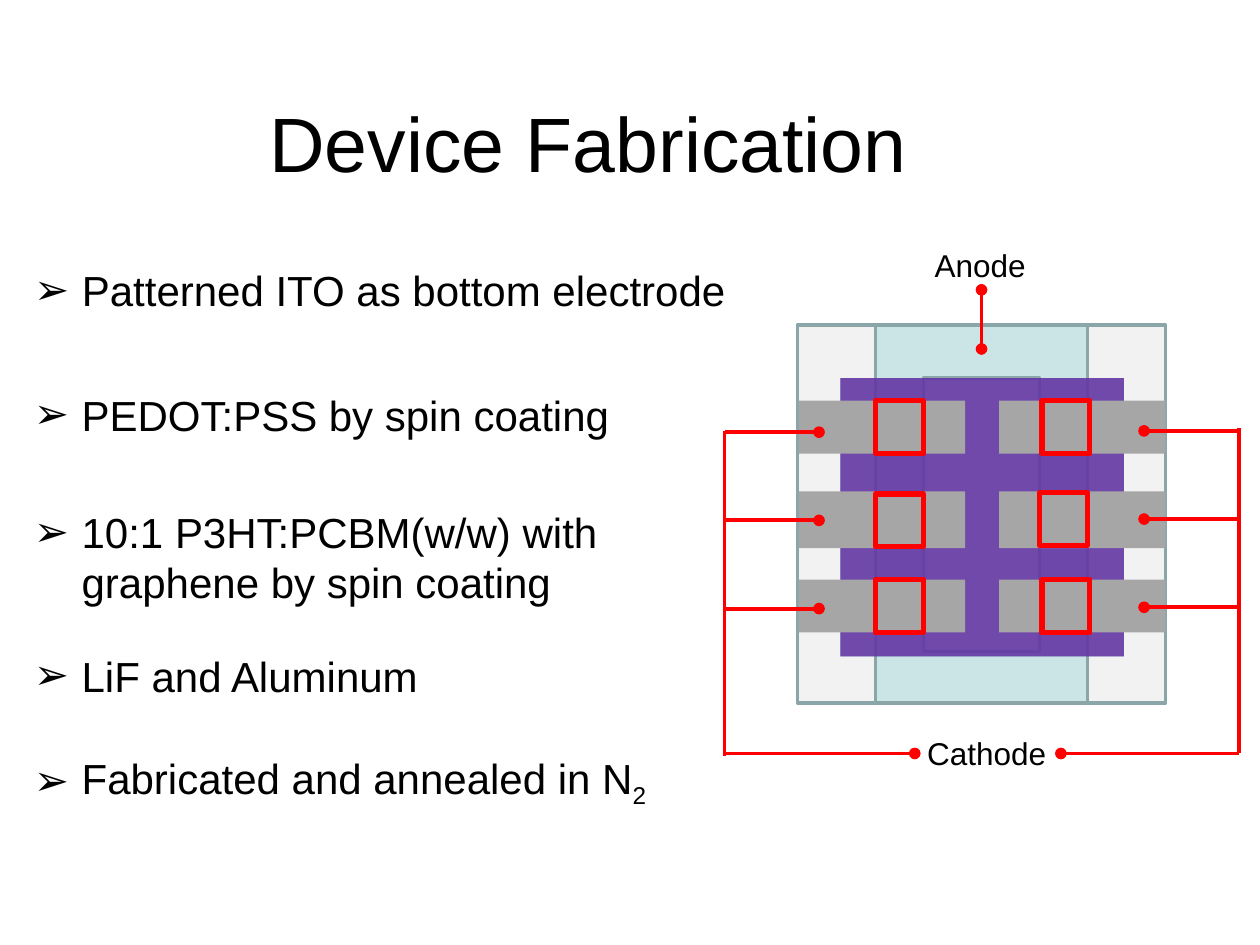
"""Build the Device Fabrication slide with its electrode layout diagram."""
from dataclasses import dataclass

from lxml import etree
from pptx import Presentation
from pptx import util as u
from pptx.dml.color import RGBColor
from pptx.enum import shapes, text
from pptx.oxml.ns import qn

PX = 9144


@dataclass(frozen=True)
class Theme:
    font: str = "Arial"
    ink: str = "000000"
    glass: str = "F2F2F2"
    edge: str = "8AA6A8"
    ito: str = "BBE0E3"
    blend: str = "0070C0"
    film: str = "7030A0"
    metal: str = "A6A6A6"
    mark: str = "FF0000"
    head: int = 44
    body: int = 24
    label: int = 18
    thin: float = 2
    wire: float = 2.25
    thick: float = 3


class Deck:
    def __init__(self, theme):
        self.theme = theme
        self.prs = Presentation()
        self.prs.slide_width, self.prs.slide_height = 1000 * PX, 750 * PX
        self.slide = self.prs.slides.add_slide(self.prs.slide_layouts[1])

    def place(self, item, box):
        item.left, item.top, item.width, item.height = (n * PX for n in box)

    def style(self, para, size):
        para.space_before = u.Pt(0)
        para.font.name = self.theme.font
        para.font.size = u.Pt(size)
        para.font.color.rgb = RGBColor.from_string(self.theme.ink)

    def title(self, words, box):
        item = self.slide.shapes.title
        self.place(item, box)
        frame = item.text_frame
        frame.text = words
        frame.auto_size = text.MSO_AUTO_SIZE.NONE
        frame.vertical_anchor = text.MSO_ANCHOR.MIDDLE
        para = frame.paragraphs[0]
        para.alignment = text.PP_ALIGN.CENTER
        self.style(para, self.theme.head)

    def point(self, words, box, sub="", item=None):
        item = item or self.slide.shapes.add_textbox(0, 0, 0, 0)
        self.place(item, box)
        frame = item.text_frame
        frame.word_wrap = True
        frame.auto_size = text.MSO_AUTO_SIZE.NONE
        para = frame.paragraphs[0]
        props = para._p.get_or_add_pPr()
        props.set("marL", str(38 * PX))
        props.set("indent", str(-38 * PX))
        etree.SubElement(props, qn("a:buFont")).set("typeface", self.theme.font)
        etree.SubElement(props, qn("a:buChar")).set("char", "➢")
        self.style(para, self.theme.body)
        para.add_run().text = words
        if sub:
            run = para.add_run()
            run.text = sub
            run.font._element.set("baseline", "-25000")

    def label(self, words, box):
        item = self.slide.shapes.add_textbox(*(n * PX for n in box))
        frame = item.text_frame
        frame.word_wrap = False
        frame.auto_size = text.MSO_AUTO_SIZE.SHAPE_TO_FIT_TEXT
        frame.text = words
        self.style(frame.paragraphs[0], self.theme.label)
        return item

    def rect(self, box, fill=None, alpha=100, edge=None, width=0):
        kind = shapes.MSO_SHAPE.RECTANGLE
        item = self.slide.shapes.add_shape(kind, *(n * PX for n in box))
        item.shadow.inherit = False
        if fill:
            item.fill.solid()
            item.fill.fore_color.rgb = RGBColor.from_string(fill)
            if alpha < 100:
                tint = item._element.spPr.find(".//" + qn("a:srgbClr"))
                etree.SubElement(tint, qn("a:alpha")).set("val", str(alpha * 1000))
        else:
            item.fill.background()
        if edge:
            item.line.color.rgb = RGBColor.from_string(edge)
            item.line.width = u.Pt(width)
        else:
            item.line.fill.background()

    def wire(self, start, end, dots=(), join=None):
        kind = shapes.MSO_CONNECTOR.STRAIGHT
        ends = (n * PX for n in start + end)
        item = self.slide.shapes.add_connector(kind, *ends)
        item.line.color.rgb = RGBColor.from_string(self.theme.mark)
        item.line.width = u.Pt(self.theme.wire)
        for dot in dots:
            etree.SubElement(item.line._ln, qn(f"a:{dot}End")).set("type", "oval")
        etree.SubElement(item._element.spPr, qn("a:effectLst"))
        if join:
            item.end_connect(*join)


def main():
    theme = Theme()
    deck = Deck(theme)
    deck.title("Device Fabrication", (17, 50, 900, 125))
    body = deck.slide.placeholders[1]
    deck.point("Patterned ITO as bottom electrode", (17, 205, 575, 78), item=body)

    for left, top, width, height, fill, alpha in (
        (633, 258, 292, 300, theme.glass, 100),
        (695, 258, 168, 300, theme.ito, 70),
        (733, 300, 92, 217, theme.glass, 100),
    ):
        box = left, top, width, height
        deck.rect(box, fill, alpha, theme.edge, theme.thin)
    for fill, alpha in ((theme.blend, 50), (theme.film, 80)):
        deck.rect((667, 300, 225, 221), fill, alpha)
    for left in (634, 793):
        for top, height in ((318, 42), (390, 45), (460, 42)):
            deck.rect((left, top, 132, height), theme.metal)

    for words, top, width, height, sub in (
        ("PEDOT:PSS by spin coating", 304, 554, 74, ""),
        ("10:1 P3HT:PCBM(w/w) with graphene by spin coating", 397, 547, 94, ""),
        ("LiF and Aluminum", 511, 547, 60, ""),
        ("Fabricated and annealed in N", 592, 547, 83, "2"),
    ):
        deck.point(words, (17, top, width, height), sub)

    for left, top in (
        (695, 318), (695, 392), (695, 460),
        (827, 318), (825, 391), (827, 460),
    ):
        deck.rect((left, top, 38, 42), edge=theme.mark, width=theme.thick)

    for rail, pad, first in ((575, 650, 343), (983, 908, 342)):
        for row in range(3):
            y = first + 70 * row
            deck.wire((rail, y), (pad, y), ["tail"])
    anode = deck.label("Anode", (732, 190, 94, 40))
    cathode = deck.label("Cathode", (726, 578, 116, 40))
    for rail, top, foot, tip, side in (
        (575, 342, 600, 726, 1), (983, 340, 598, 842, 3),
    ):
        deck.wire((rail, foot), (rail, top))
        deck.wire((rail, 598), (tip, 598), ["tail"], (cathode, side))
    deck.wire((779, 277), (779, 230), ["head", "tail"], (anode, 2))
    deck.prs.save("out.pptx")


if __name__ == "__main__":
    main()
